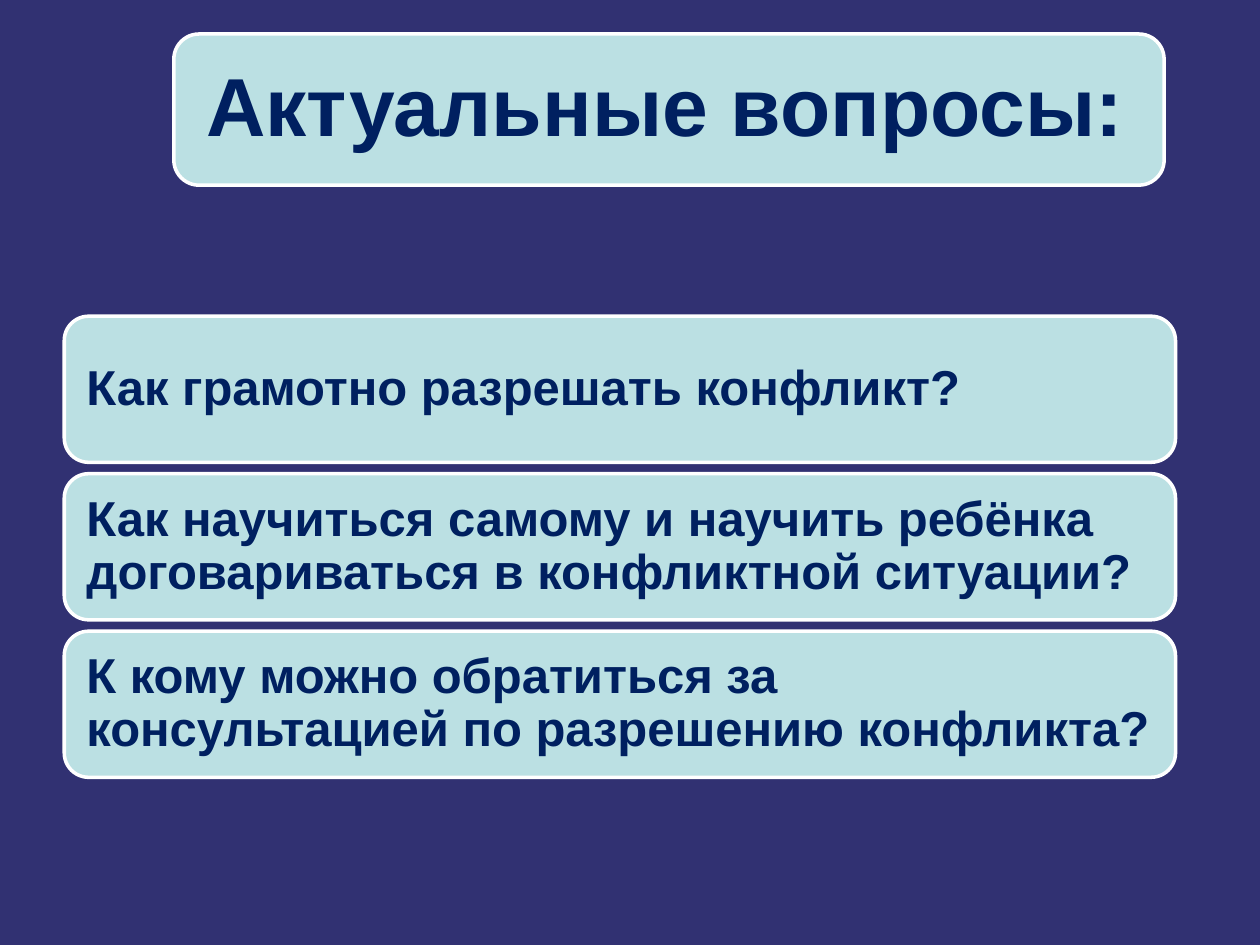
from pptx import Presentation
from pptx.dml.color import RGBColor
from pptx.enum import shapes, text
from pptx.util import Inches, Pt

BACKGROUND = RGBColor(0x31, 0x31, 0x72)
PANEL = RGBColor(0xBB, 0xE0, 0xE3)
WHITE = RGBColor(0xFF, 0xFF, 0xFF)
NAVY = RGBColor(0x00, 0x20, 0x60)

TITLE = "Актуальные вопросы:"
QUESTIONS = [
    "Как грамотно разрешать конфликт?",
    "Как научиться самому и научить ребёнка договариваться в конфликтной ситуации?",
    "К кому можно обратиться за консультацией по разрешению конфликта?",
]
QUESTION_TOP = 2.51
QUESTION_STEP = 1.25


def add_panel(slide, wording, left, top, width, height, size, inset):
    """Add a rounded panel holding one left-aligned paragraph."""
    shape = slide.shapes.add_shape(
        shapes.MSO_SHAPE.ROUNDED_RECTANGLE,
        Inches(left), Inches(top), Inches(width), Inches(height),
    )
    shape.shadow.inherit = False
    shape.fill.solid()
    shape.fill.fore_color.rgb = PANEL
    shape.line.color.rgb = WHITE
    shape.line.width = Pt(2)

    frame = shape.text_frame
    frame.word_wrap = True
    frame.vertical_anchor = text.MSO_ANCHOR.MIDDLE
    frame.margin_left = frame.margin_right = Inches(inset)
    frame.margin_top = frame.margin_bottom = Inches(inset)

    paragraph = frame.paragraphs[0]
    paragraph.text = wording
    paragraph.alignment = text.PP_ALIGN.LEFT
    paragraph.line_spacing = 0.9
    paragraph.font.name = "Arial"
    paragraph.font.size = Pt(size)
    paragraph.font.bold = True
    paragraph.font.color.rgb = NAVY


def main():
    presentation = Presentation()
    presentation.slide_width = Inches(10)
    presentation.slide_height = Inches(7.5)
    slide = presentation.slides.add_slide(presentation.slide_layouts[6])
    slide.background.fill.solid()
    slide.background.fill.fore_color.rgb = BACKGROUND

    add_panel(slide, TITLE, 1.38, 0.27, 7.86, 1.2, size=47, inset=0.2)
    for index, question in enumerate(QUESTIONS):
        top = QUESTION_TOP + index * QUESTION_STEP
        add_panel(slide, question, 0.51, top, 8.82, 1.16, size=28, inset=0.12)

    presentation.save("out.pptx")


if __name__ == "__main__":
    main()
